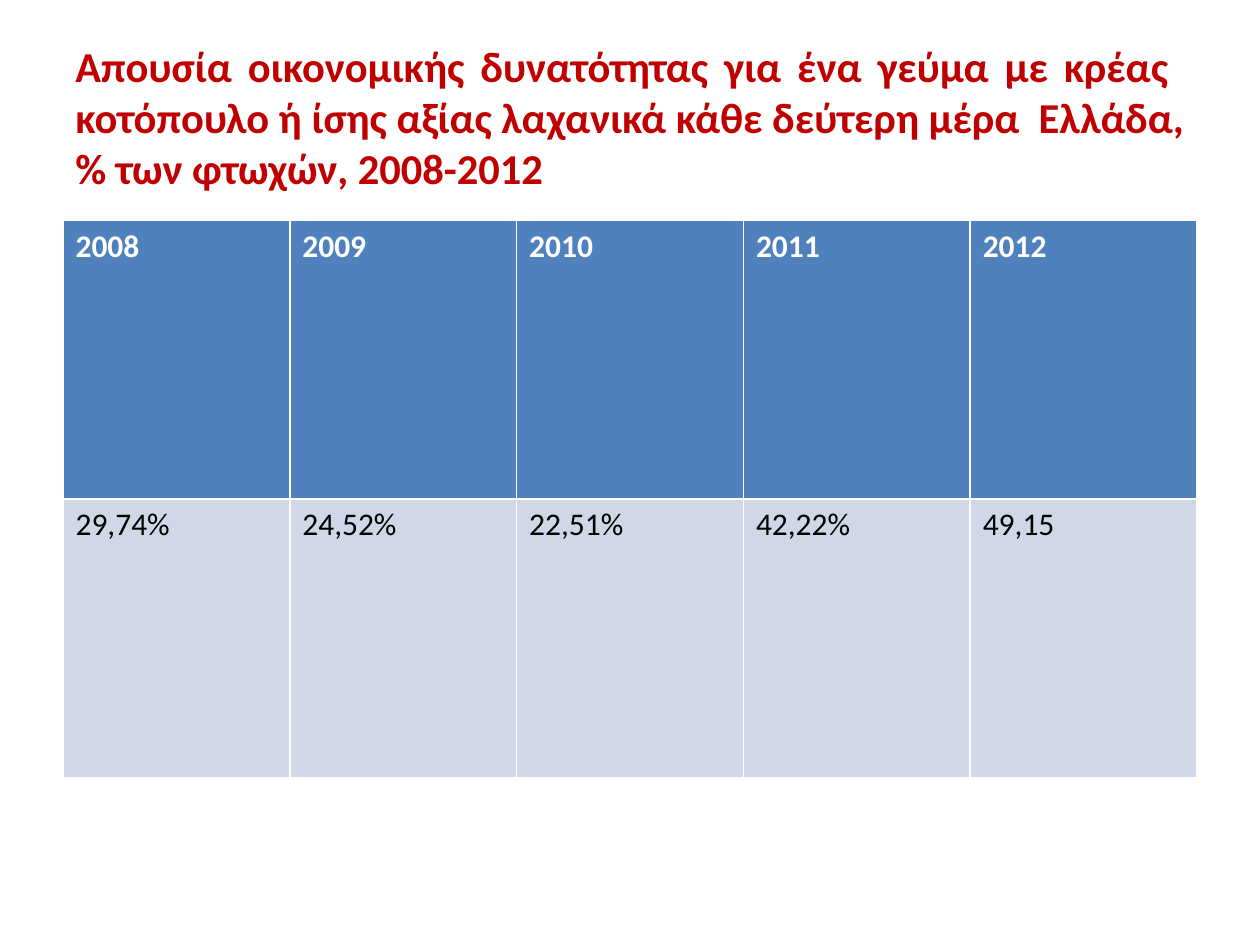
from pptx import Presentation
from pptx.dml.color import RGBColor
from pptx.enum.text import MSO_ANCHOR, PP_ALIGN
from pptx.util import Cm, Pt

RED = RGBColor(0xC0, 0x00, 0x00)
BLUE = RGBColor(0x4F, 0x81, 0xBD)
PALE_BLUE = RGBColor(0xD0, 0xD8, 0xE8)
WHITE = RGBColor(0xFF, 0xFF, 0xFF)
BLACK = RGBColor(0x00, 0x00, 0x00)

TITLE = (
    "Απουσία οικονομικής δυνατότητας για ένα γεύμα με κρέας  κοτόπουλο "
    "ή ίσης αξίας λαχανικά κάθε δεύτερη μέρα  Ελλάδα, % των φτωχών, 2008-2012"
)
YEARS = ["2008", "2009", "2010", "2011", "2012"]
SHARES = ["29,74%", "24,52%", "22,51%", "42,22%", "49,15"]


class SlideBuilder:
    font_name = "Calibri"
    left = Cm(1.27)
    width = Cm(22.86)

    def __init__(self, slide):
        self.slide = slide

    def set_text(self, paragraph, text, size, color, bold):
        paragraph.text = text
        font = paragraph.font
        font.name = self.font_name
        font.size = Pt(size)
        font.bold = bold
        font.color.rgb = color

    def title(self, text, top, height):
        shape = self.slide.shapes.add_textbox(self.left, top, self.width, height)
        frame = shape.text_frame
        frame.word_wrap = True
        frame.vertical_anchor = MSO_ANCHOR.MIDDLE
        paragraph = frame.paragraphs[0]
        paragraph.alignment = PP_ALIGN.JUSTIFY
        self.set_text(paragraph, text, 24.3, RED, True)

    def table(self, header, values, top, height):
        shape = self.slide.shapes.add_table(
            2, len(header), self.left, top, self.width, height
        )
        styles = [(header, BLUE, WHITE, True), (values, PALE_BLUE, BLACK, False)]
        for row, (texts, fill, color, bold) in zip(shape.table.rows, styles):
            for cell, text in zip(row.cells, texts):
                cell.fill.solid()
                cell.fill.fore_color.rgb = fill
                self.set_text(cell.text_frame.paragraphs[0], text, 18, color, bold)


def main():
    presentation = Presentation()
    presentation.slide_width = Cm(25.4)
    presentation.slide_height = Cm(19.05)
    slide = presentation.slides.add_slide(presentation.slide_layouts[6])
    builder = SlideBuilder(slide)
    builder.title(TITLE, Cm(0.76), Cm(3.18))
    builder.table(YEARS, SHARES, Cm(4.45), Cm(11.22))
    presentation.save("out.pptx")


if __name__ == "__main__":
    main()
